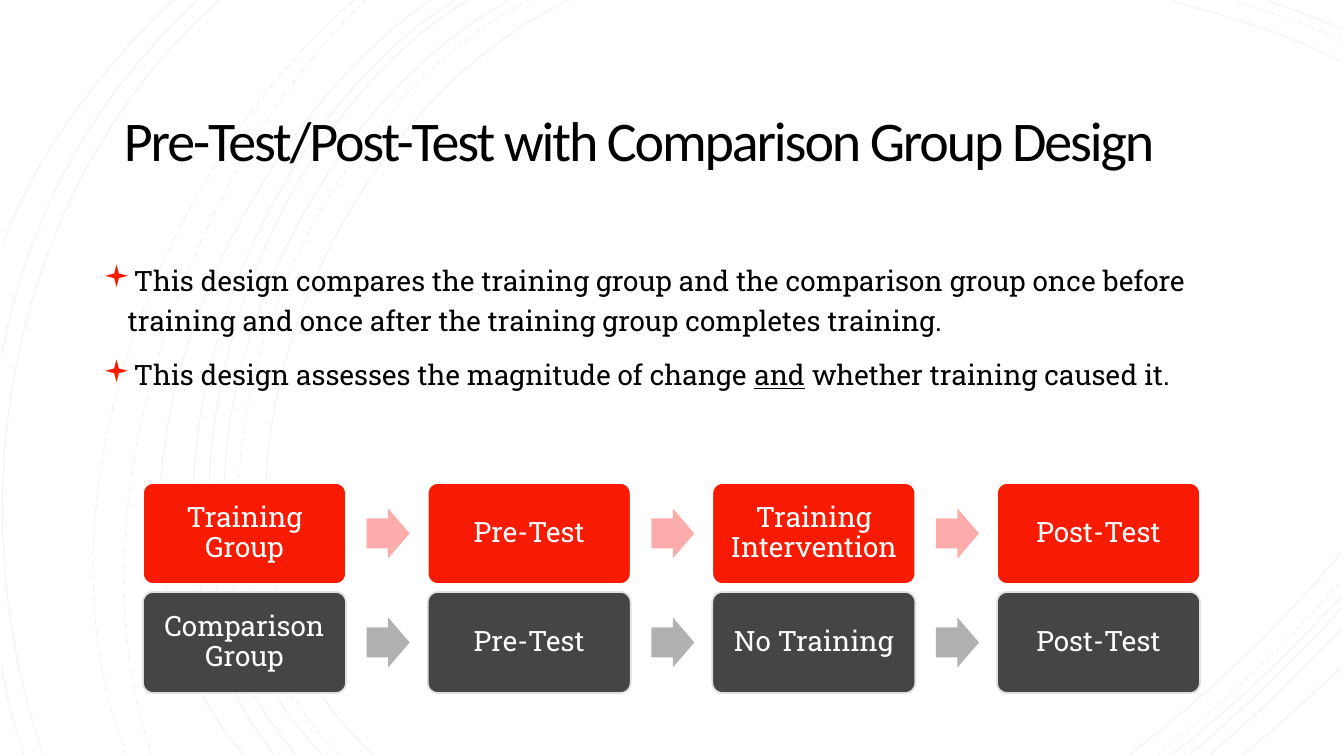
from lxml.etree import SubElement
from pptx import Presentation
from pptx.dml.color import RGBColor
from pptx.enum.dml import MSO_LINE
from pptx.enum.shapes import MSO_SHAPE
from pptx.enum.text import MSO_ANCHOR, PP_ALIGN
from pptx.oxml.ns import qn
from pptx.util import Pt

SCALE = 914400 / 100.8
SLAB = "Roboto Slab"

ARCS = [
    ((570, 0), (318, 116), (144, 544), (372, 754)),
    ((1342, 62), (1288, 34), (1228, 16), (1171, 1)),
    ((1130, 754), (1207, 696), (1279, 627), (1342, 552)),
    ((510, 0), (272, 128), (111, 541), (322, 754)),
    ((1342, 29), (1317, 19), (1293, 9), (1268, 1)),
    ((1173, 754), (1233, 707), (1290, 653), (1342, 596)),
    ((468, 0), (246, 134), (111, 545), (296, 754)),
    ((1190, 754), (1244, 710), (1294, 660), (1342, 608)),
    ((455, 0), (233, 139), (98, 537), (274, 754)),
    ((1211, 754), (1256, 715), (1300, 672), (1342, 628)),
    ((430, 0), (219, 148), (53, 533), (243, 754)),
    ((1244, 754), (1277, 727), (1309, 698), (1342, 667)),
    ((219, 0), (11, 186), (-46, 494), (43, 754)),
    ((197, 1), (93, 97), (28, 216), (2, 354)),
    ((1, 663), (6, 695), (14, 725), (24, 754)),
    ((173, 0), (101, 70), (37, 151), (2, 246)),
]
DASHED = [
    ((529, 0), (287, 126), (124, 541), (339, 754)),
    ((1342, 41), (1307, 25), (1270, 12), (1235, 1)),
    ((1157, 755), (1223, 704), (1285, 645), (1341, 582)),
]
DOTTED = [((366, 0), (189, 167), (66, 513), (152, 754))]
LONG = [((354, 0), (158, 170), (29, 503), (126, 754))]

POINTS = [
    ["This design compares the training group and the comparison group once before "
     "training and once after the training group completes training."],
    ["This design assesses the magnitude of change ", "and", " whether training caused it."],
]
ROWS = [
    (["Training Group", "Pre-Test", "Training Intervention", "Post-Test"],
     "F81B02", "FFFFFF", "FBACAB"),
    (["Comparison Group", "Pre-Test", "No Training", "Post-Test"],
     "454545", "E0E0E0", "B1B1B1"),
]


def px(size):
    return round(size * SCALE)


def paint(color, code):
    color.rgb = RGBColor.from_string(code)


def style(para, face, size, code):
    para.font.name = face
    para.font.size = Pt(size)
    paint(para.font.color, code)


def set_frame(frame, side, top):
    frame.word_wrap = True
    frame.vertical_anchor = MSO_ANCHOR.MIDDLE
    frame.margin_left = frame.margin_right = px(side)
    frame.margin_top = frame.margin_bottom = px(top)


def add_text(slide, box, side, top):
    frame = slide.shapes.add_textbox(*map(px, box)).text_frame
    set_frame(frame, side, top)
    return frame


def add_block(slide, kind, box, fill, adjust=()):
    block = slide.shapes.add_shape(kind, *map(px, box))
    block.shadow.inherit = False
    block.fill.solid()
    paint(block.fill.fore_color, fill)
    block.line.fill.background()
    for i, value in enumerate(adjust):
        block.adjustments[i] = value
    return block


def bend(curve):
    route = next(curve._element.iter(qn("a:path")))
    cubic = SubElement(route, qn("a:cubicBezTo"))
    for leg in route.findall(qn("a:lnTo")):
        cubic.append(leg[0])
        route.remove(leg)


def add_arcs(slide, arcs, dash=None, width=0.75):
    for start, *rest in arcs:
        pen = slide.shapes.build_freeform(*start, scale=SCALE)
        pen.add_line_segments(rest, close=False)
        curve = pen.convert_to_shape()
        bend(curve)
        curve.shadow.inherit = False
        curve.fill.background()
        paint(curve.line.color, "F2F2F2")
        curve.line.width = Pt(width)
        if dash is not None:
            curve.line.dash_style = dash


def add_back(slide, box):
    add_block(slide, MSO_SHAPE.RECTANGLE, box, "FFFFFF")
    add_arcs(slide, ARCS)
    add_arcs(slide, DASHED, MSO_LINE.DASH)
    add_arcs(slide, DOTTED, MSO_LINE.DASH_DOT, 1)
    add_arcs(slide, LONG, MSO_LINE.LONG_DASH)


def add_title(slide, box):
    para = add_text(slide, box, 25, 25).paragraphs[0]
    para.alignment = PP_ALIGN.CENTER
    para.line_spacing = 0.85
    style(para, "Calibri", 40, "000000")
    run = para.add_run()
    run.text = "Pre-Test/Post-Test with Comparison Group Design"
    run._r.get_or_add_rPr().set("spc", "-150")


def add_bullet(para):
    props = para._p.get_or_add_pPr()
    props.set("marL", str(px(25)))
    props.set("indent", str(px(-25)))
    color = SubElement(props, qn("a:buClr"))
    SubElement(color, qn("a:srgbClr"), val="F81B02")
    SubElement(props, qn("a:buSzPct"), val="110000")
    SubElement(props, qn("a:buFont"), typeface="Wingdings")
    SubElement(props, qn("a:buChar"), char="▪")


def add_points(slide, box):
    frame = add_text(slide, box, 10, 5)
    for i, parts in enumerate(POINTS):
        para = frame.add_paragraph() if i else frame.paragraphs[0]
        add_bullet(para)
        para.line_spacing = 1.2
        if i:
            para.space_before = Pt(10)
        style(para, SLAB, 20, "000000")
        for part in parts:
            run = para.add_run()
            run.text = part
            if part == "and":
                run.font.underline = True


def add_card(slide, box, label, fill, edge):
    card = add_block(slide, MSO_SHAPE.ROUNDED_RECTANGLE, box, fill, [0.1])
    paint(card.line.color, edge)
    card.line.width = Pt(1.25)
    set_frame(card.text_frame, 11, 11)
    para = card.text_frame.paragraphs[0]
    para.text = label
    para.alignment = PP_ALIGN.CENTER
    para.line_spacing = 0.9
    style(para, SLAB, 20, "FFFFFF")


def add_flow(slide, box, labels, fill, edge, tint):
    left, top, width, height = box
    card = 203
    step = (width - card) / (len(labels) - 1)
    for i, label in enumerate(labels):
        x = left + i * step
        if i:
            spot = (x - 61, top + (height - 50) / 2, 43, 50)
            add_block(slide, MSO_SHAPE.RIGHT_ARROW, spot, tint, [0.6, 0.5])
        add_card(slide, (x, top, card, height), label, fill, edge)


def main():
    deck = Presentation()
    deck.slide_width, deck.slide_height = px(1344), px(756)
    slide = deck.slides.add_slide(deck.slide_layouts[6])
    add_back(slide, (0, 0, 1344, 756))
    add_title(slide, (93, 70, 1092, 149))
    add_points(slide, (93, 251, 1159, 146))
    for i, row in enumerate(ROWS):
        add_flow(slide, (143, 483 + i * 109, 1057, 101), *row)
    deck.save("out.pptx")


if __name__ == "__main__":
    main()
